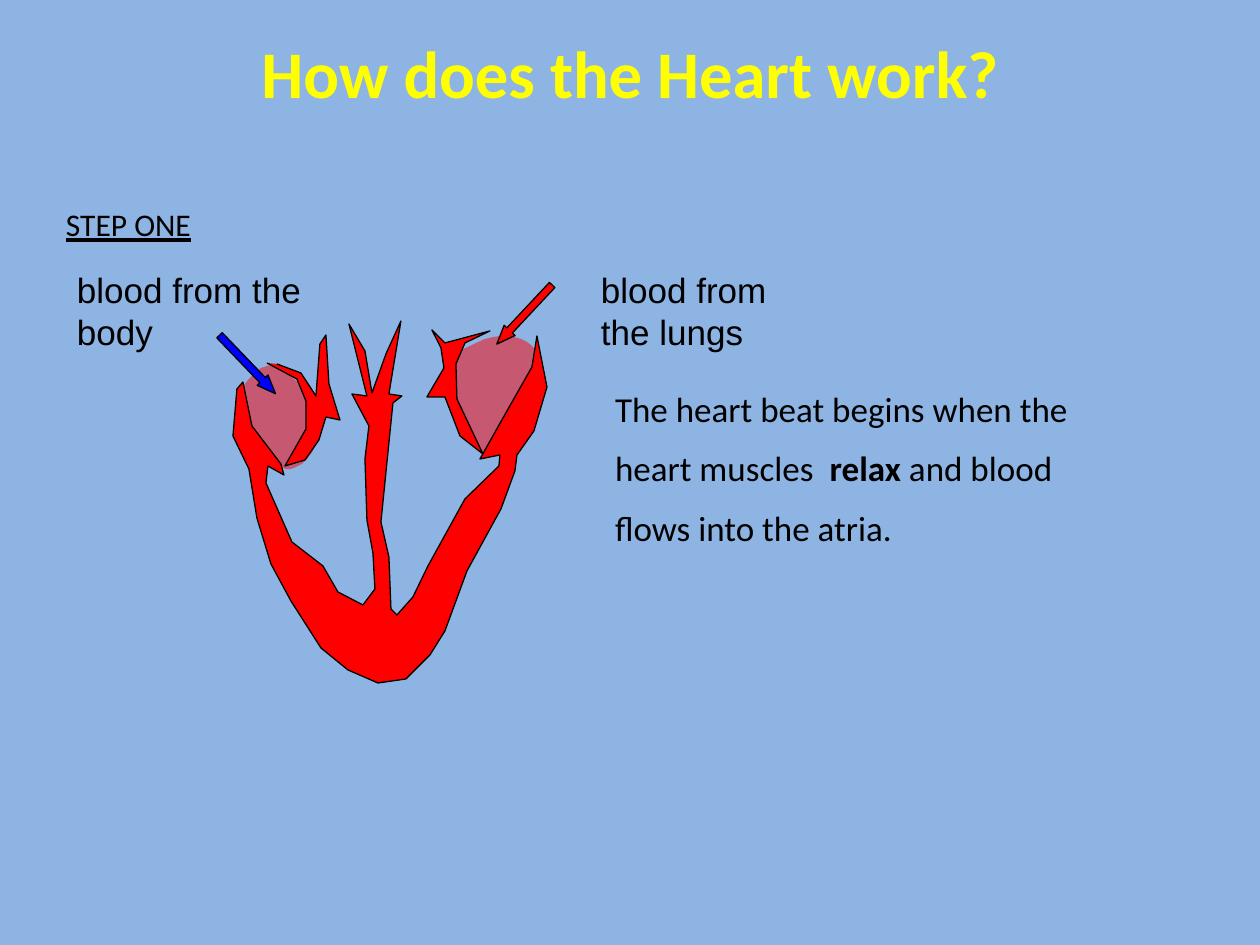
from typing import NamedTuple, Optional

from lxml import etree
from pptx import Presentation
from pptx import util as u
from pptx.dml.color import RGBColor
from pptx.enum import shapes, text
from pptx.oxml.ns import qn

PX = u.Inches(1) / 126
STEPS = 6
COLORS = {
    "sky": "8EB4E3",
    "title": "FFFF00",
    "red": "FF0000",
    "blue": "0000FF",
    "black": "000000",
}
Point = tuple[float, float]


class Outline(NamedTuple):
    points: list[Point]
    alpha: Optional[int] = None
    closed: bool = True


class Arrow(NamedTuple):
    x: int
    y: int
    angle: float
    color: str


class Label(NamedTuple):
    x: int
    y: int
    w: int
    h: int
    lines: list[list[str]]
    size: int
    font: str = "Calibri"
    color: str = "black"
    bold: tuple[str, ...] = ()
    underline: bool = False
    align: text.PP_ALIGN = text.PP_ALIGN.LEFT
    inset: int = 13
    gap: int = 0


LEFT_ATRIUM = [
    (446, 375), (459, 423), (484, 454), (508, 440),
    (532, 406), (536, 351), (500, 336), (456, 354),
]
RIGHT_ATRIUM = [
    (241, 401), (256, 440), (286, 469), (314, 449),
    (315, 404), (282, 369), (261, 368), (243, 387),
]
MUSCLE = [
    (237, 389), (233, 436), (249, 469), (257, 518), (271, 564), (291, 601),
    (321, 648), (348, 670), (378, 683), (406, 679), (430, 655), (445, 631),
    (467, 571), (501, 509), (515, 471), (517, 455), (534, 431), (547, 387),
    (537, 336), (532, 367), (507, 411), (480, 459), (500, 455), (499, 466),
    (465, 499), (428, 566), (413, 597), (397, 615), (391, 609), (389, 557),
    (381, 522), (393, 403), (402, 396), (389, 394), (401, 321), (386, 354),
    (372, 393), (365, 351), (349, 324), (367, 396), (352, 394), (369, 426),
    (365, 459), (367, 520), (373, 553), (375, 589), (363, 605), (338, 592),
    (323, 566), (292, 542), (266, 483), (268, 466), (284, 475), (281, 464),
    (252, 426), (243, 382),
]
RIGHT_WALL = [
    (267, 363), (297, 379), (306, 401), (306, 429), (285, 466), (305, 460),
    (319, 440), (326, 417), (340, 420), (329, 384), (326, 335), (320, 344),
    (316, 396), (301, 373), (277, 364),
]
LEFT_WALL = [
    (490, 331), (465, 343), (456, 364), (457, 399), (483, 454), (460, 436),
    (445, 397), (427, 397), (444, 368), (441, 348), (432, 330), (445, 343),
]


def rounded(points: list[Point]) -> list[Point]:
    curve = []
    for i, b in enumerate(points):
        a, c, d = points[i - 1], points[(i + 1) % len(points)], points[(i + 2) % len(points)]
        for step in range(STEPS):
            t = step / STEPS
            curve.append(tuple(
                (2 * q + (r - p) * t + (2 * p - 5 * q + 4 * r - v) * t**2
                 + (3 * q - p - 3 * r + v) * t**3) / 2
                for p, q, r, v in zip(a, b, c, d)))
    return curve


OUTLINES = [
    Outline(rounded(LEFT_ATRIUM), alpha=50),
    Outline(rounded(RIGHT_ATRIUM), alpha=50),
    Outline(MUSCLE),
    Outline(RIGHT_WALL, closed=False),
    Outline(LEFT_WALL),
]
ARROWS = [Arrow(207, 357, 46.2, "blue"), Arrow(484, 307, 133.1, "red")]
LABELS = [
    Label(0, 26, 1260, 174, [["How does the Heart work?"]], 38, color="title",
          bold=("How does the Heart work?",), align=text.PP_ALIGN.CENTER),
    Label(64, 262, 252, 97, [["blood from the body"]], 20, "Arial"),
    Label(588, 262, 210, 97, [["blood from the lungs"]], 20, "Arial"),
    Label(591, 381, 635, 180,
          [["The heart beat begins when the"],
           ["heart muscles  ", "relax", " and blood"],
           ["flows into the atria."]],
          20, bold=("relax",), inset=24, gap=10),
    Label(53, 199, 387, 50, [["STEP ONE"]], 18, underline=True),
]


def px(n: int) -> u.Emu:
    return u.Emu(round(n * PX))


def rgb(name: str) -> RGBColor:
    return RGBColor.from_string(COLORS[name])


def paint(sp, color: str, alpha: Optional[int] = None) -> None:
    sp.shadow.inherit = False
    sp.fill.solid()
    sp.fill.fore_color.rgb = rgb(color)
    if alpha is None:
        sp.line.color.rgb = rgb("black")
        sp.line.width = u.Pt(0.75)
    else:
        sp.line.fill.background()
        clr = sp._element.spPr.find(qn("a:solidFill")).find(qn("a:srgbClr"))
        etree.SubElement(clr, qn("a:alpha"), val=str(alpha * 1000))


def draw_outline(s, o: Outline) -> None:
    fb = s.shapes.build_freeform(*o.points[0], scale=PX)
    fb.add_line_segments(o.points[1:], close=o.closed)
    paint(fb.convert_to_shape(), "red", o.alpha)


def draw_arrow(s, a: Arrow) -> None:
    sp = s.shapes.add_shape(shapes.MSO_SHAPE.RIGHT_ARROW, px(a.x), px(a.y), px(81), px(15))
    sp.adjustments[0] = 0.5
    sp.adjustments[1] = 1.25
    sp.rotation = a.angle
    paint(sp, a.color)


def draw_label(s, d: Label) -> None:
    tf = s.shapes.add_textbox(px(d.x), px(d.y), px(d.w), px(d.h)).text_frame
    tf.word_wrap = True
    tf.margin_left = px(d.inset)
    for i, line in enumerate(d.lines):
        p = tf.add_paragraph() if i else tf.paragraphs[0]
        p.alignment = d.align
        p.space_before = u.Pt(d.gap if i else 0)
        for part in line:
            r = p.add_run()
            r.text = part
            r.font.name = d.font
            r.font.size = u.Pt(d.size)
            r.font.bold = part in d.bold
            r.font.underline = d.underline
            r.font.color.rgb = rgb(d.color)


def main() -> None:
    prs = Presentation()
    prs.slide_width, prs.slide_height = px(1260), px(945)
    s = prs.slides.add_slide(prs.slide_layouts[6])
    s.background.fill.solid()
    s.background.fill.fore_color.rgb = rgb("sky")
    for o in OUTLINES:
        draw_outline(s, o)
    for a in ARROWS:
        draw_arrow(s, a)
    for d in LABELS:
        draw_label(s, d)
    prs.save("out.pptx")


if __name__ == "__main__":
    main()
